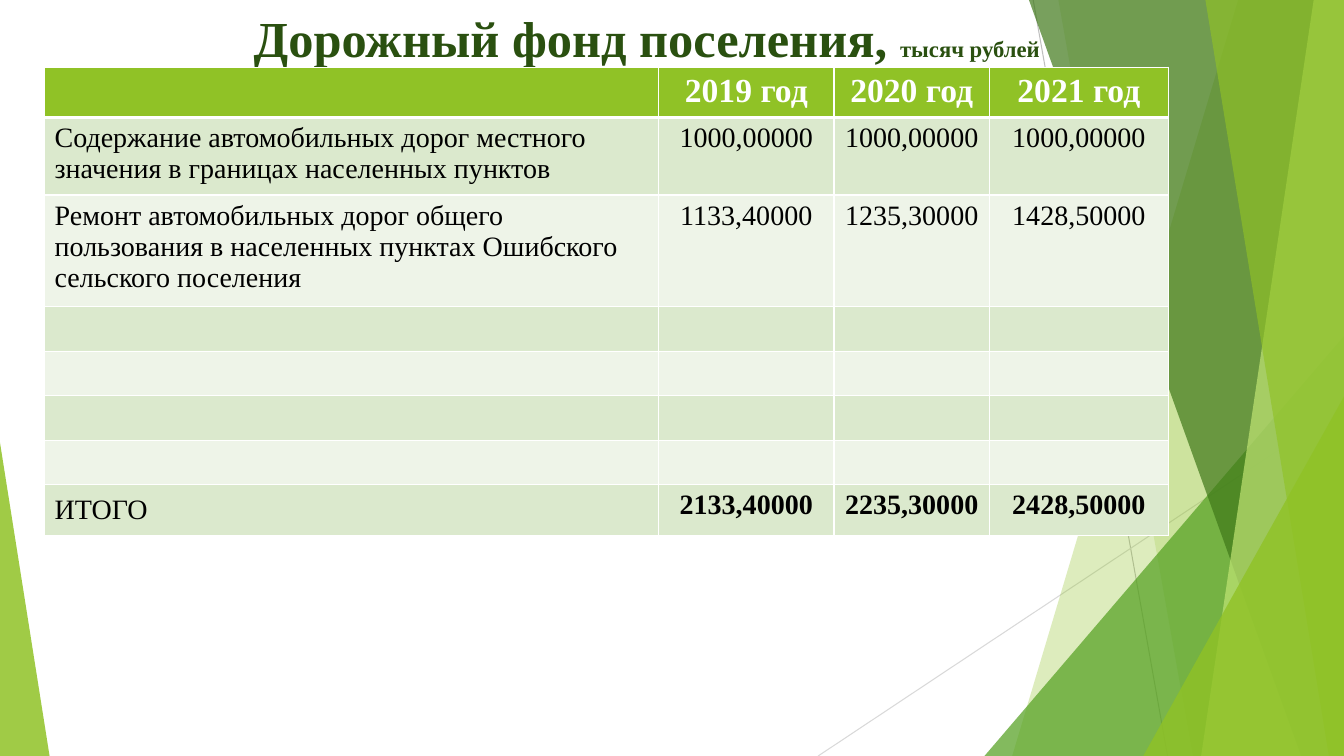
from dataclasses import dataclass

from lxml.etree import SubElement
from pptx import Presentation
from pptx.dml.color import RGBColor
from pptx.enum.shapes import MSO_CONNECTOR, MSO_SHAPE
from pptx.enum.text import MSO_ANCHOR, PP_ALIGN
from pptx.oxml.ns import qn
from pptx.util import Inches, Pt

COLUMNS, ROWS = 160, 90  # slide grid, twelve cells to the inch


def cells(count):
    return Inches(count / 12)


@dataclass(frozen=True)
class Theme:
    font: str = "Times New Roman"
    title: str = "2A5010"
    ink: str = "000000"
    white: str = "FFFFFF"
    lime: str = "90C226"
    grass: str = "54A021"
    forest: str = "3F7819"
    pale: str = "C0E474"
    bands: tuple = ("DBE9CD", "EEF4E8")
    title_size: float = 36
    unit_size: float = 16.2
    header_size: float = 24
    body_size: float = 20


@dataclass(frozen=True)
class Box:
    left: float
    top: float
    width: float
    height: float

    def place(self):
        return [cells(v) for v in (self.left, self.top, self.width, self.height)]


THEME = Theme()

HEADER = ["", "2019 год", "2020 год", "2021 год"]
EXPENSES = [
    ["Содержание автомобильных дорог местного значения в границах населенных пунктов",
     "1000,00000", "1000,00000", "1000,00000"],
    ["Ремонт автомобильных дорог общего пользования в населенных пунктах "
     "Ошибского сельского поселения", "1133,40000", "1235,30000", "1428,50000"],
]
TOTAL = ["ИТОГО", "2133,40000", "2235,30000", "2428,50000"]
FUND = [HEADER, *EXPENSES, *[[""] * 4 for _ in range(4)], TOTAL]
FUND_COLUMNS = [73.1, 20.9, 18.5, 21.3]
FUND_ROWS = [5.7, 9.2, 13.3, *[5.3] * 4, 6.1]


def add_run(paragraph, text, size, color, bold=False):
    run = paragraph.add_run()
    run.text = text
    formats = {"name": THEME.font, "size": Pt(size), "bold": bold}
    for name, value in formats.items():
        setattr(run.font, name, value)
    run.font.color.rgb = RGBColor.from_string(color)


def paint(facet, color, opacity):
    facet.shadow.inherit = False
    facet.line.fill.background()
    facet.fill.solid()
    facet.fill.fore_color.rgb = RGBColor.from_string(color)
    tint = facet.fill._xPr.find(qn("a:solidFill"))[0]
    SubElement(tint, qn("a:alpha"), val=str(opacity * 1000))


def add_triangle(slide, box, apex, color, opacity):
    triangle = slide.shapes.add_shape(MSO_SHAPE.ISOSCELES_TRIANGLE, *box.place())
    triangle.adjustments[0] = apex
    paint(triangle, color, opacity)


def add_facets(slide, box):
    # Thin rays behind the facets
    rays = [(26, 0, 42, box.height, "BFBFBF"),
            (box.width, 48.4, 0.4, box.height, "D9D9D9")]
    for x1, y1, x2, y2, color in rays:
        ray = slide.shapes.add_connector(
            MSO_CONNECTOR.STRAIGHT, cells(box.left + x1), cells(box.top + y1),
            cells(box.left + x2), cells(box.top + y2))
        ray.line.width = Pt(0.75)
        ray.line.color.rgb = RGBColor.from_string(color)
        SubElement(ray._element.spPr, qn("a:effectLst"))

    # Slanted strips run from an upper to a lower x and fill up to the right edge
    def strip(upper, lower, color, opacity):
        right, bottom = box.left + box.width, box.top + box.height
        builder = slide.shapes.build_freeform(
            cells(box.left + upper), cells(box.top), scale=1.0)
        builder.add_line_segments(
            [(cells(x), cells(y)) for x, y in
             ((right, box.top), (right, bottom), (box.left + lower, bottom))], close=True)
        paint(builder.convert_to_shape(), color, opacity)

    # Corner triangles stand in the lower right corner
    def corner(left, top, color, opacity):
        area = Box(box.left + left, box.top + top, box.width - left, box.height - top)
        add_triangle(slide, area, 1, color, opacity)

    facets = [
        (strip, 50.4, 23.5, THEME.lime, 30),
        (strip, 29, 45, THEME.lime, 20),
        (corner, 20.2, 40, THEME.grass, 72),
        (strip, 25.5, 57.9, THEME.forest, 70),
        (strip, 59.4, 46, THEME.pale, 70),
        (strip, 46.5, 61.2, THEME.lime, 65),
        (corner, 39.1, 47.2, THEME.lime, 80),
    ]
    for draw, first, second, color, opacity in facets:
        draw(first, second, color, opacity)


def add_title(slide, box):
    frame = slide.shapes.add_textbox(*box.place()).text_frame
    formats = {"word_wrap": True, "vertical_anchor": MSO_ANCHOR.BOTTOM, "margin_bottom": 0}
    for name, value in formats.items():
        setattr(frame, name, value)
    heading = frame.paragraphs[0]
    heading.alignment = PP_ALIGN.CENTER
    add_run(heading, "Дорожный фонд поселения, ", THEME.title_size, THEME.title, True)
    add_run(heading, "тысяч рублей", THEME.unit_size, THEME.title, True)


def add_borders(cell, bottom):
    properties = cell._tc.get_or_add_tcPr()
    widths = {"a:lnL": 1, "a:lnR": 1, "a:lnT": 1, "a:lnB": bottom}
    for position, (side, width) in enumerate(widths.items()):
        border = SubElement(properties, qn(side), w=str(Pt(width)))
        fill = SubElement(border, qn("a:solidFill"))
        SubElement(fill, qn("a:srgbClr"), val=THEME.white)
        properties.insert(position, border)  # borders come before the fill


def add_fund_table(slide, box):
    fund = slide.shapes.add_table(len(FUND), len(HEADER), *box.place()).table
    for column, width in zip(fund.columns, FUND_COLUMNS):
        column.width = cells(width)
    for row, height in zip(fund.rows, FUND_ROWS):
        row.height = cells(height)

    last = len(FUND) - 1
    for r, entries in enumerate(FUND):
        header = r == 0
        for c, text in enumerate(entries):
            cell = fund.cell(r, c)
            cell.fill.solid()
            cell.fill.fore_color.rgb = RGBColor.from_string(
                THEME.lime if header else THEME.bands[(r - 1) % 2])
            add_borders(cell, 3 if header or r == 0 else 1)
            if not text:
                continue
            entry = cell.text_frame.paragraphs[0]
            entry.alignment = PP_ALIGN.CENTER if c else PP_ALIGN.LEFT
            add_run(entry, text,
                    THEME.header_size if header else THEME.body_size,
                    THEME.white if header else THEME.ink,
                    header or (r == last and c > 0))

    # The larger space after the total label lowers its line
    add_run(fund.cell(last, 0).text_frame.paragraphs[0], " ", THEME.header_size, THEME.ink)


def main():
    deck = Presentation()
    deck.slide_width, deck.slide_height = cells(COLUMNS), cells(ROWS)
    slide = deck.slides.add_slide(deck.slide_layouts[6])
    add_facets(slide, Box(97, 0, COLUMNS - 97, ROWS))
    add_triangle(slide, Box(0, 52.7, 5.9, ROWS - 52.7), 0, THEME.lime, 85)
    add_title(slide, Box(8, 0, 138, 8))
    add_fund_table(slide, Box(5.3, 8, sum(FUND_COLUMNS), sum(FUND_ROWS)))
    deck.save("out.pptx")


if __name__ == "__main__":
    main()
